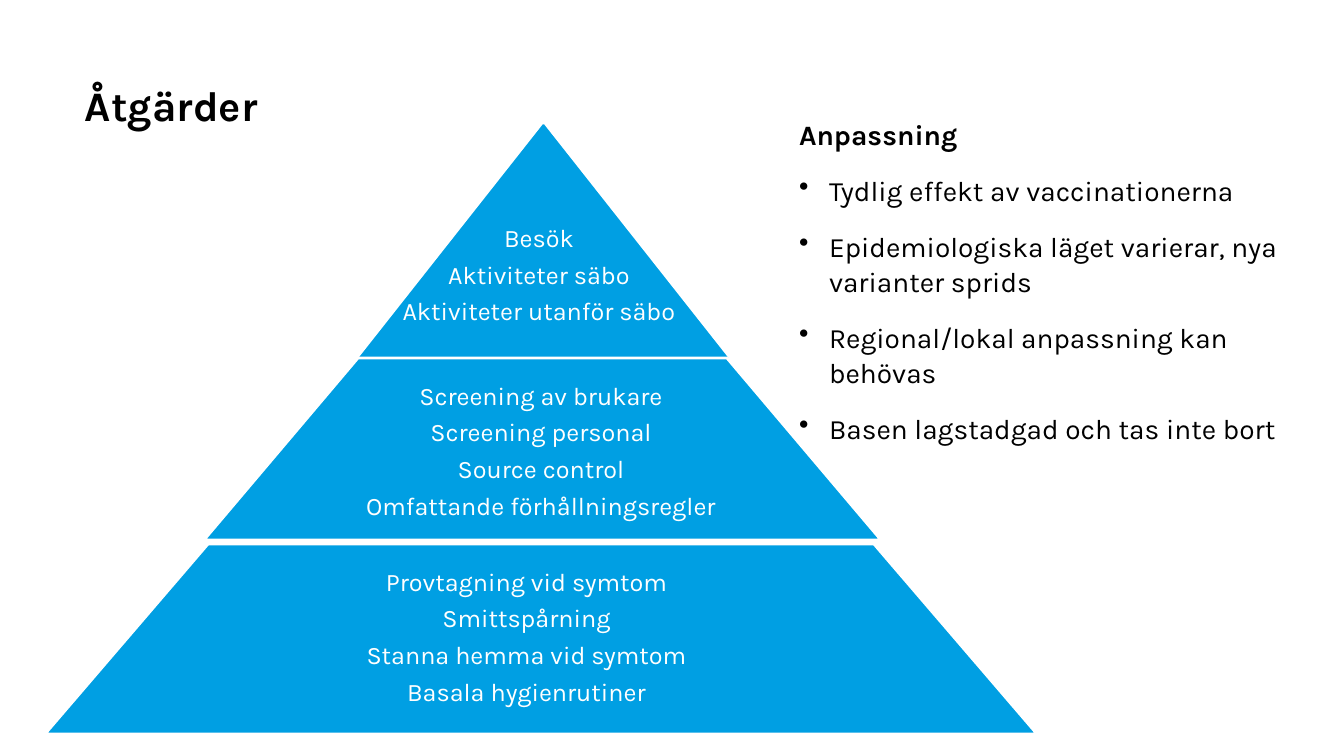
from dataclasses import dataclass

from lxml.etree import SubElement
from pptx import Presentation
from pptx.dml.color import RGBColor as RGB
from pptx.enum.shapes import MSO_SHAPE as SHAPE
from pptx.enum.text import MSO_ANCHOR as ANCHOR, PP_ALIGN as ALIGN
from pptx.oxml.ns import qn
from pptx.util import Emu, Pt


@dataclass(frozen=True)
class Theme:
    font: str = "Karla"
    ink: RGB = RGB(0, 0, 0)
    paper: RGB = RGB(255, 255, 255)
    blue: RGB = RGB(0x00, 0x9F, 0xE3)
    title: int = 30
    body: int = 20
    tier: int = 18


THEME = Theme()
BULLET_INDENT = 30

TIERS = [
    ((355, 123, 377, 237), 187, (302, 199, 474, 154),
     ["Besök", "Aktiviteter säbo", "Aktiviteter utanför säbo"]),
    ((204, 358, 677, 182), 154, (331, 383, 420, 138),
     ["Screening av brukare", "Screening personal", "Source control",
      "Omfattande förhållningsregler"]),
    ((45, 544, 992, 190), 163, (240, 563, 573, 150),
     ["Provtagning vid symtom", "Smittspårning", "Stanna hemma vid symtom",
      "Basala hygienrutiner"]),
]

ADAPTATIONS = [
    "Tydlig effekt av vaccinationerna",
    "Epidemiologiska läget varierar, nya varianter sprids",
    "Regional/lokal anpassning kan behövas",
    "Basen lagstadgad och tas inte bort",
]


def px(n):
    return Emu(round(n * 914400 / 100.8))


def add_text_frame(s, box, inset=0, anchor=ANCHOR.TOP):
    tf = s.shapes.add_textbox(*map(px, box)).text_frame
    tf.word_wrap = True
    tf.vertical_anchor = anchor
    tf.margin_left = tf.margin_right = px(inset)
    tf.margin_top = tf.margin_bottom = px(inset)
    return tf


def next_paragraph(tf):
    p = tf.paragraphs[0]
    return tf.add_paragraph() if p.runs else p


def add_run(p, text, size, color, bold=False):
    r = p.add_run()
    r.text = text
    r.font.name = THEME.font
    r.font.size = Pt(size)
    r.font.bold = bold
    r.font.color.rgb = color


def add_bullet(p):
    pPr = p._p.get_or_add_pPr()
    pPr.set("marL", str(px(BULLET_INDENT)))
    pPr.set("indent", str(-px(BULLET_INDENT)))
    SubElement(pPr, qn("a:buChar")).set("char", "•")


def add_title(s, box, text):
    p = add_text_frame(s, box, anchor=ANCHOR.BOTTOM).paragraphs[0]
    p.line_spacing = Pt(34)
    add_run(p, text, THEME.title, THEME.ink, bold=True)


def add_adaptations(s, box, heading, items):
    tf = add_text_frame(s, box)
    for i, text in enumerate([heading, *items]):
        p = next_paragraph(tf)
        if i:
            add_bullet(p)
            p.space_before = Pt(12)
        p.line_spacing = Pt(25)
        p.space_after = Pt(3)
        add_run(p, text, THEME.body, THEME.ink, bold=i == 0)


def add_tier(s, box, slant, text_box, lines):
    sp = s.shapes.add_shape(SHAPE.TRAPEZOID, *map(px, box))
    sp.adjustments[0] = slant / min(box[2:])
    sp.shadow.inherit = False
    sp.fill.solid()
    sp.fill.fore_color.rgb = THEME.blue
    sp.line.color.rgb = THEME.paper
    sp.line.width = Pt(2)

    tf = add_text_frame(s, text_box, inset=2, anchor=ANCHOR.MIDDLE)
    for text in lines:
        p = next_paragraph(tf)
        p.alignment = ALIGN.CENTER
        p.line_spacing = 0.9
        p.space_after = Pt(6.8)
        add_run(p, text, THEME.tier, THEME.paper)


def main():
    prs = Presentation()
    prs.slide_width, prs.slide_height = px(1344), px(756)
    s = prs.slides.add_slide(prs.slide_layouts[6])
    add_adaptations(s, (799, 116, 520, 403), "Anpassning", ADAPTATIONS)
    add_title(s, (85, 29, 1008, 101), "Åtgärder")
    for tier in TIERS:
        add_tier(s, *tier)
    prs.save("out.pptx")


if __name__ == "__main__":
    main()
